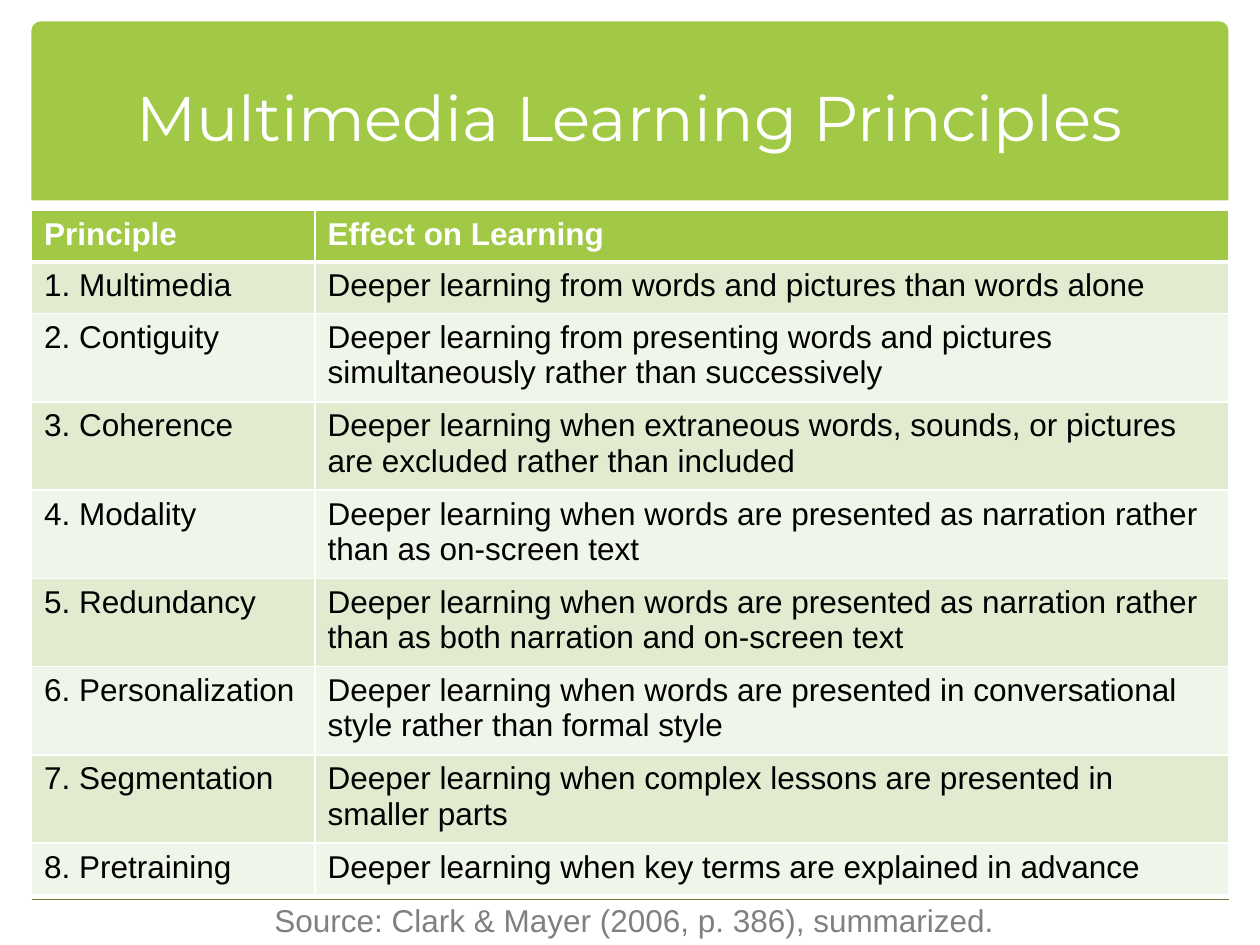
from lxml import etree
from pptx import Presentation
from pptx.dml.color import RGBColor
from pptx.enum.shapes import MSO_CONNECTOR as Connector, MSO_SHAPE as Shape
from pptx.enum.text import MSO_ANCHOR as Anchor, PP_ALIGN as Align
from pptx.oxml.ns import qn
from pptx.util import Inches, Pt

GREEN = RGBColor(0xA2, 0xC9, 0x46)
OLIVE = RGBColor(0x6B, 0x7F, 0x3A)
BAND_DARK = RGBColor(0xE0, 0xEB, 0xCF)
BAND_LIGHT = RGBColor(0xF0, 0xF5, 0xE9)
WHITE = RGBColor(0xFF, 0xFF, 0xFF)
BLACK = RGBColor(0, 0, 0)
GRAY = RGBColor(0x80, 0x80, 0x80)

LEFT, WIDTH = 0.25, 9.5
COLUMN_WIDTHS = (2.25, 7.25)
ROW_HEIGHT = 0.41

HEADINGS = ("Principle", "Effect on Learning")
PRINCIPLES = (
    ("Multimedia", "from words and pictures than words alone"),
    ("Contiguity", "from presenting words and pictures simultaneously rather than successively"),
    ("Coherence", "when extraneous words, sounds, or pictures are excluded rather than included"),
    ("Modality", "when words are presented as narration rather than as on-screen text"),
    ("Redundancy", "when words are presented as narration rather than as both narration and on-screen text"),
    ("Personalization", "when words are presented in conversational style rather than formal style"),
    ("Segmentation", "when complex lessons are presented in smaller parts"),
    ("Pretraining", "when key terms are explained in advance"),
)


def write(frame, text, color, size=18, name="Arial", bold=False, align=Align.LEFT):
    frame.text = text
    paragraph = frame.paragraphs[0]
    paragraph.alignment = align
    font = paragraph.runs[0].font
    font.name, font.size, font.bold = name, Pt(size), bold
    font.color.rgb = color


def add_banner(slide):
    banner = slide.shapes.add_shape(
        Shape.ROUND_2_SAME_RECTANGLE, Inches(LEFT), Inches(0.17), Inches(WIDTH), Inches(1.42))
    banner.adjustments[0] = 0.05
    banner.adjustments[1] = 0
    banner.shadow.inherit = False
    banner.fill.solid()
    banner.fill.fore_color.rgb = GREEN
    banner.line.fill.background()


def add_rule(slide, y):
    rule = slide.shapes.add_connector(
        Connector.STRAIGHT, Inches(LEFT), Inches(y), Inches(LEFT + WIDTH), Inches(y))
    rule.line.color.rgb = OLIVE
    rule.line.width = Pt(1)
    etree.SubElement(rule._element.spPr, qn("a:effectLst"))


def add_label(slide, left, top, width, height, text, color, **style):
    label = slide.shapes.add_textbox(Inches(left), Inches(top), Inches(width), Inches(height))
    frame = label.text_frame
    frame.word_wrap = True
    frame.vertical_anchor = Anchor.MIDDLE
    write(frame, text, color, **style)


def add_borders(cell, bottom, top):
    properties = cell._tc.get_or_add_tcPr()
    for side, points in (("L", 1), ("R", 1), ("T", top), ("B", bottom)):
        border = etree.SubElement(properties, qn(f"a:ln{side}"), w=str(Pt(points)))
        fill = etree.SubElement(border, qn("a:solidFill"))
        etree.SubElement(fill, qn("a:srgbClr"), val=str(WHITE))


def fill_row(cells, texts, background, color, bold=False, bottom=1, top=1):
    for cell, text in zip(cells, texts):
        write(cell.text_frame, text, color, bold=bold)
        add_borders(cell, bottom, top)
        cell.fill.solid()
        cell.fill.fore_color.rgb = background


def add_principles(slide):
    row_count = len(PRINCIPLES) + 1
    table = slide.shapes.add_table(
        row_count, len(HEADINGS), Inches(LEFT), Inches(1.67),
        Inches(WIDTH), Inches(ROW_HEIGHT * row_count)).table
    for column, width in zip(table.columns, COLUMN_WIDTHS):
        column.width = Inches(width)
    for row in table.rows:
        row.height = Inches(ROW_HEIGHT)
    fill_row(table.rows[0].cells, HEADINGS, GREEN, WHITE, bold=True, bottom=3)
    for number, (principle, effect) in enumerate(PRINCIPLES, 1):
        texts = (f"{number}. {principle}", f"Deeper learning {effect}")
        background = BAND_DARK if number % 2 else BAND_LIGHT
        fill_row(table.rows[number].cells, texts, background, BLACK, top=3 if number == 1 else 1)


def main():
    deck = Presentation()
    deck.slide_width, deck.slide_height = Inches(10), Inches(7.5)
    slide = deck.slides.add_slide(deck.slide_layouts[6])
    add_banner(slide)
    add_rule(slide, 7.14)
    add_label(slide, 0.33, 0.3, 9.33, 1.25, "Multimedia Learning Principles", WHITE,
              size=36, name="Montserrat", align=Align.CENTER)
    add_principles(slide)
    add_label(slide, 2.08, 7.1, 5.92, 0.4,
              "Source: Clark & Mayer (2006, p. 386), summarized.", GRAY)
    deck.save("out.pptx")


if __name__ == "__main__":
    main()
